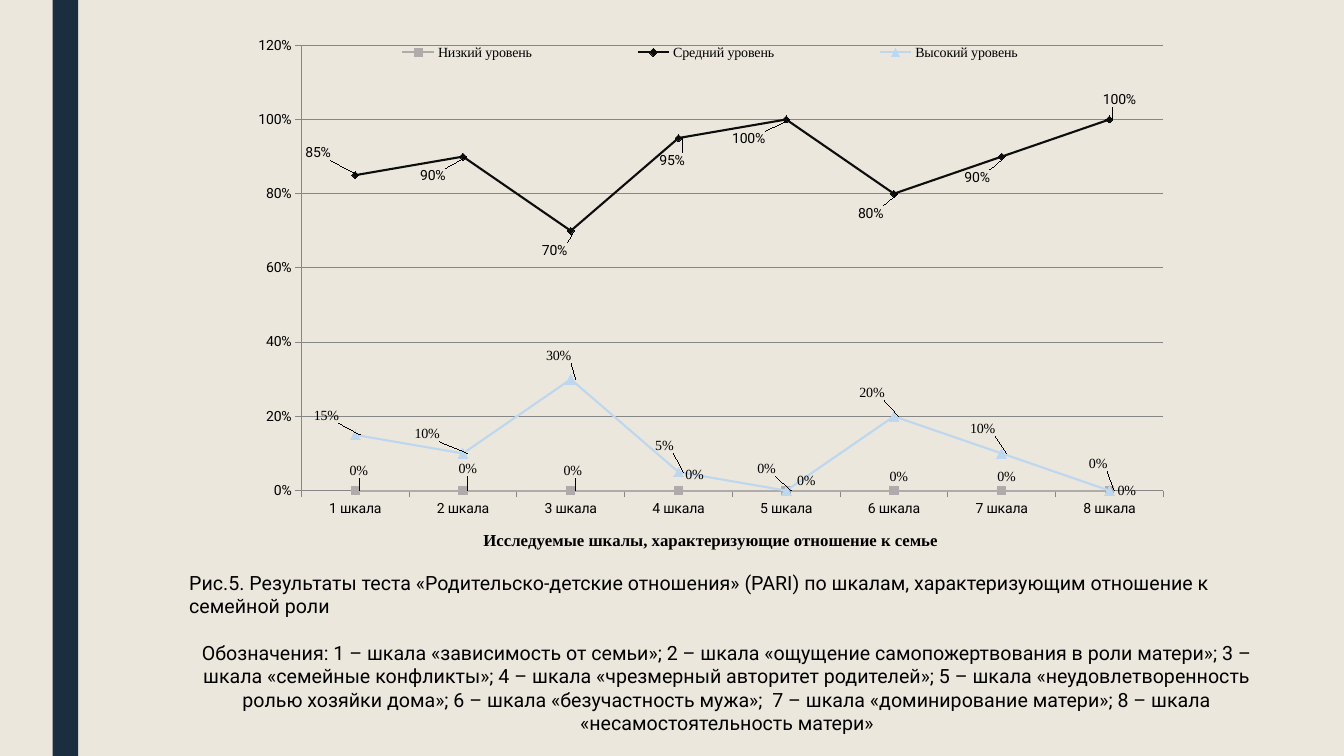
from dataclasses import dataclass

from lxml import etree
from pptx import Presentation
from pptx.chart.data import CategoryChartData
from pptx.dml.color import RGBColor
from pptx.enum.chart import (XL_CHART_TYPE, XL_LABEL_POSITION, XL_LEGEND_POSITION,
                             XL_MARKER_STYLE, XL_TICK_MARK)
from pptx.enum.shapes import MSO_SHAPE
from pptx.enum.text import PP_ALIGN
from pptx.oxml.ns import qn
from pptx.util import Cm, Pt

LINE_CHART = XL_CHART_TYPE.LINE_MARKERS
LABEL_RIGHT = XL_LABEL_POSITION.RIGHT
LEGEND_TOP = XL_LEGEND_POSITION.TOP
SQUARE, DIAMOND, TRIANGLE = (XL_MARKER_STYLE.SQUARE, XL_MARKER_STYLE.DIAMOND,
                             XL_MARKER_STYLE.TRIANGLE)
TICK_OUTSIDE = XL_TICK_MARK.OUTSIDE
RECTANGLE = MSO_SHAPE.RECTANGLE
LEFT, CENTER = PP_ALIGN.LEFT, PP_ALIGN.CENTER


@dataclass(frozen=True)
class Theme:
    """Colours, fonts and type sizes of the slide."""
    background: str = "EBE7DD"
    bar: str = "1A2E40"
    text: str = "000000"
    grid: str = "868686"
    low: str = "AFABAB"
    middle: str = "0D0D0D"
    high: str = "BDD7EE"
    sans: str = "Roboto"
    serif: str = "Times New Roman"
    chart_size: int = 10
    axis_title_size: int = 12
    body_size: int = 14
    line_width: float = 1.5


@dataclass(frozen=True)
class Level:
    """One line of the chart with label offsets in points."""
    name: str
    values: tuple
    color: str
    marker: int
    marker_size: int
    label_font: str
    label_offsets: tuple


THEME = Theme()
AXIS_TITLE = "Исследуемые шкалы, характеризующие отношение к семье"
CAPTION = ("Рис.5. Результаты теста «Родительско-детские отношения» (PARI) по шкалам, "
           "характеризующим отношение к семейной роли")
SCALES = ("Обозначения: 1 – шкала «зависимость от семьи»; 2 – шкала «ощущение "
          "самопожертвования в роли матери»; 3 – шкала «семейные конфликты»; 4 – шкала "
          "«чрезмерный авторитет родителей»; 5 – шкала «неудовлетворенность ролью хозяйки "
          "дома»; 6 – шкала «безучастность мужа»;  7 – шкала «доминирование матери»; "
          "8 – шкала «несамостоятельность матери»")
LEVELS = (
    Level("Низкий уровень", (0,) * 8, THEME.low, SQUARE, 6, THEME.serif,
          ((-10, -14), (-9, -16), (-11, -14), (-1, -11),
           (2, -7), (-9, -10), (-9, -10), (0, 0))),
    Level("Средний уровень", (0.85, 0.9, 0.7, 0.95, 1, 0.8, 0.9, 1),
          THEME.middle, DIAMOND, 5, THEME.sans,
          ((-41, -16), (-36, 14), (-26, 14), (-19, 16),
           (-44, 14), (-31, 14), (-32, 15), (-10, -14))),
    Level("Высокий уровень", (0.15, 0.1, 0.3, 0.05, 0, 0.2, 0.1, 0),
          THEME.high, TRIANGLE, 7, THEME.serif,
          ((-36, -14), (-41, -14), (-24, -17), (-23, -19),
           (-27, -16), (-31, -17), (-29, -18), (-21, -19))),
)


def format_font(font, name=THEME.sans, size=THEME.body_size, color=THEME.text, bold=False):
    """Apply a typeface, size, colour and weight to a font."""
    font.name, font.size, font.bold = name, Pt(size), bold
    font.color.rgb = RGBColor.from_string(color)


def write_text(paragraph, text, align=LEFT, space_before=0, **font_format):
    """Write one formatted run into a paragraph."""
    paragraph.alignment = align
    paragraph.space_before = Pt(space_before)
    run = paragraph.add_run()
    run.text = text
    format_font(run.font, **font_format)


def manual_layout(**settings):
    """Return a chart layout element with the given settings."""
    layout = etree.Element(qn("c:layout"))
    manual = etree.SubElement(layout, qn("c:manualLayout"))
    for name, value in settings.items():
        etree.SubElement(manual, qn(f"c:{name}")).set("val", str(value))
    return layout


class SlideBuilder:
    """Holds the theme and the current slide."""

    def __init__(self, slide, theme):
        """Keep the slide and paint its background."""
        self.slide, self.theme = slide, theme
        fill = slide.background.fill
        fill.solid()
        fill.fore_color.rgb = RGBColor.from_string(theme.background)

    def bar(self, left, top, width, height):
        """Add a plain decorative bar."""
        shape = self.slide.shapes.add_shape(RECTANGLE, left, top, width, height)
        shape.shadow.inherit = False
        shape.fill.solid()
        shape.fill.fore_color.rgb = RGBColor.from_string(self.theme.bar)
        shape.line.fill.background()

    def text(self, left, top, width, height, paragraphs):
        """Add a wrapped text box from pairs of text and format."""
        frame = self.slide.shapes.add_textbox(left, top, width, height).text_frame
        frame.word_wrap = True
        for index, (text, text_format) in enumerate(paragraphs):
            paragraph = frame.add_paragraph() if index else frame.paragraphs[0]
            write_text(paragraph, text, **text_format)

    def line_chart(self, left, top, width, height, levels):
        """Add the line chart with its axes, legend and labels."""
        chart_data = CategoryChartData(number_format="0%")
        chart_data.categories = [f"{number} шкала" for number in range(1, 9)]
        for level in levels:
            chart_data.add_series(level.name, level.values)
        chart = self.slide.shapes.add_chart(LINE_CHART, left, top, width, height,
                                            chart_data).chart
        chart.has_title = False
        format_font(chart.font, size=self.theme.chart_size)
        chart.plots[0].vary_by_categories = False
        self.axes(chart)
        self.legend(chart)
        for series, level in zip(chart.plots[0].series, levels):
            self.level(series, level, width.pt, height.pt)

    def axes(self, chart):
        """Format both axes and place the plot area."""
        category_axis, value_axis = chart.category_axis, chart.value_axis
        value_axis.minimum_scale, value_axis.maximum_scale = 0, 1.2
        value_axis.major_unit = 0.2
        value_axis.has_major_gridlines = True
        value_axis.tick_labels.number_format = "0%"
        value_axis.tick_labels.number_format_is_linked = False
        for axis in (category_axis, value_axis):
            axis.major_tick_mark = TICK_OUTSIDE
            format_font(axis.tick_labels.font, size=self.theme.chart_size)
        for holder in (category_axis, value_axis, value_axis.major_gridlines):
            holder.format.line.color.rgb = RGBColor.from_string(self.theme.grid)
            holder.format.line.width = Pt(0.75)
        write_text(category_axis.axis_title.text_frame.paragraphs[0], AXIS_TITLE,
                   align=CENTER, name=self.theme.serif,
                   size=self.theme.axis_title_size, bold=True)
        plot_area = chart.plots[0]._element.getparent()
        for layout in plot_area.findall(qn("c:layout")):
            plot_area.remove(layout)
        plot_area.insert(0, manual_layout(layoutTarget="inner", xMode="edge", yMode="edge",
                                          x=0.07, y=0.022, w=0.907, h=0.818))

    def legend(self, chart):
        """Spread the legend along the top of the plot."""
        chart.has_legend = True
        legend = chart.legend
        legend.position = LEGEND_TOP
        legend.include_in_layout = False
        format_font(legend.font, name=self.theme.serif, size=self.theme.chart_size)
        for layout in legend._element.findall(qn("c:layout")):
            legend._element.remove(layout)
        legend._element.find(qn("c:legendPos")).addnext(
            manual_layout(xMode="edge", yMode="edge", x=0.07, y=0.01, w=0.86, h=0.05))

    def level(self, series, level, chart_width, chart_height):
        """Format one line, its markers and its shifted labels."""
        color = RGBColor.from_string(level.color)
        series.smooth = False
        series.format.line.color.rgb = color
        series.format.line.width = Pt(self.theme.line_width)
        series.marker.style, series.marker.size = level.marker, level.marker_size
        series.marker.format.fill.solid()
        series.marker.format.fill.fore_color.rgb = color
        series.marker.format.line.color.rgb = color
        labels = series.data_labels
        labels.show_value = True
        labels.number_format, labels.number_format_is_linked = "0%", False
        format_font(labels.font, name=level.label_font, size=self.theme.chart_size)
        for index, (right, down) in enumerate(level.label_offsets):
            label = series.points[index].data_label
            format_font(label.font, name=level.label_font, size=self.theme.chart_size)
            label.position = LABEL_RIGHT
            element = labels._element.findall(qn("c:dLbl"))[index]
            element.find(qn("c:idx")).addnext(
                manual_layout(x=round(right / chart_width, 4), y=round(down / chart_height, 4)))


def main():
    """Build the slide and save it."""
    presentation = Presentation()
    presentation.slide_width, presentation.slide_height = Cm(33.87), Cm(19.05)
    slide = presentation.slides.add_slide(presentation.slide_layouts[6])
    builder = SlideBuilder(slide, THEME)
    builder.bar(Cm(1.33), Cm(0), Cm(0.64), Cm(19.05))
    builder.line_chart(Cm(5.92), Cm(0.84), Cm(23.95), Cm(13.72), LEVELS)
    builder.text(Cm(4.52), Cm(14.25), Cm(27.61), Cm(4.01),
                 [(CAPTION, {}), (SCALES, {"align": CENTER, "space_before": 16.5})])
    presentation.save("out.pptx")


if __name__ == "__main__":
    main()
